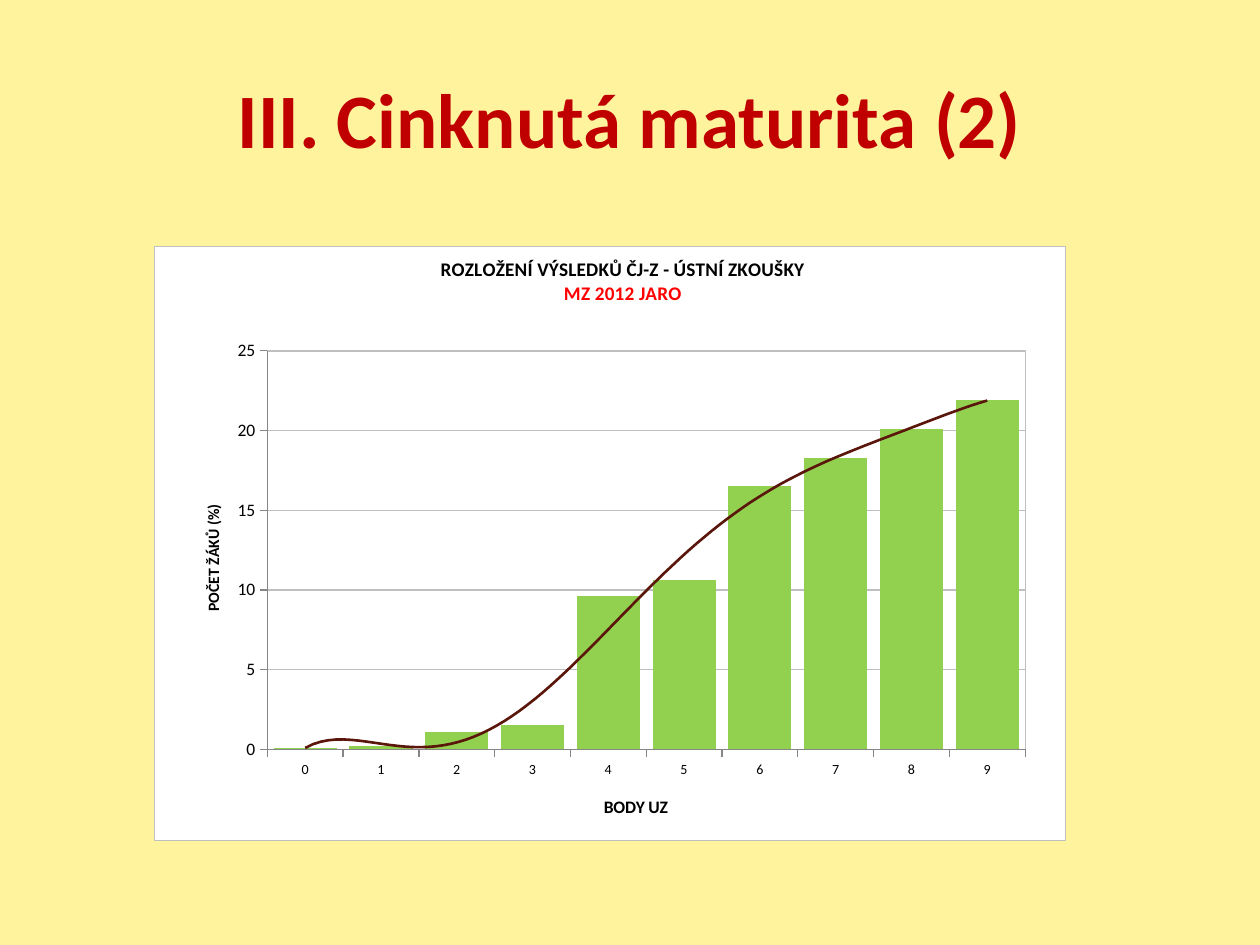
"""Build the slide showing the distribution of oral exam results."""
from lxml import etree
from pptx import Presentation
from pptx.chart.data import CategoryChartData
from pptx.dml.color import RGBColor
from pptx.enum.chart import XL_CHART_TYPE, XL_TICK_MARK
from pptx.enum.text import MSO_ANCHOR, PP_ALIGN
from pptx.oxml.ns import qn
from pptx.util import Inches, Pt

COLUMNS = XL_CHART_TYPE.COLUMN_CLUSTERED
OUTSIDE = XL_TICK_MARK.OUTSIDE
MIDDLE = MSO_ANCHOR.MIDDLE
CENTER = PP_ALIGN.CENTER

HEADING = "III. Cinknutá maturita (2)"
CHART_TITLE = [("ROZLOŽENÍ VÝSLEDKŮ ČJ-Z - ÚSTNÍ ZKOUŠKY", "ink"), ("MZ 2012 JARO", "accent")]
POINTS_TITLE = [("BODY UZ", "ink")]
SHARE_TITLE = [("POČET ŽÁKŮ (%)", "ink")]
SHARES = [0.1, 0.2, 1.1, 1.5, 9.6, 10.6, 16.5, 18.3, 20.1, 21.9]

THEME = {
    "font": "Calibri",
    "colors": {"page": "FFF39D", "heading": "C00000", "ink": "000000", "accent": "FF0000",
               "panel": "FFFFFF", "grid": "BFBFBF", "axis": "868686", "bar": "92D050",
               "trend": "5A160B"},
    "sizes": {"heading": 44, "title": 11, "points": 10, "share": 9, "labels": 10, "ticks": 8},
    "lines": {"thin": 0.75, "trend": 1.5},
}
SLIDE = (10, 7.5)
HEADING_AREA = (0.05, 0.04, 0.9, 0.17)
CHART_AREA = (0.122, 0.26, 0.724, 0.63)
PLOT_AREA = {"x": 0.124, "y": 0.176, "w": 0.832, "h": 0.671}
TITLE_SPOTS = {"title": {"x": 0.31, "y": 0.01}, "points": {"x": 0.49, "y": 0.92},
               "share": {"x": 0.05, "y": 0.43}}


def color(name):
    """Return a theme color."""
    return RGBColor.from_string(THEME["colors"][name])


def place(area):
    """Turn shares of the slide into lengths."""
    return [Inches(share * side) for share, side in zip(area, SLIDE * 2)]


def style_font(font, size, ink="ink", bold=False):
    """Apply theme values to a font."""
    values = {"name": THEME["font"], "size": Pt(THEME["sizes"][size]), "bold": bold}
    for name, value in values.items():
        setattr(font, name, value)
    font.color.rgb = color(ink)


def style_line(line, ink, width="thin"):
    """Apply theme values to a line."""
    line.color.rgb = color(ink)
    line.width = Pt(THEME["lines"][width])


def add_node(parent, tag, **attributes):
    """Add a child element."""
    return etree.SubElement(parent, qn(tag), attributes)


def set_layout(parent, spot, inner=False):
    """Fix a chart part at shares of the chart's size."""
    layout = parent.find(qn("c:layout"))
    if layout is None:
        layout = add_node(parent, "c:layout")
        parent.insert(1 if parent.find(qn("c:tx")) is not None else 0, layout)
    for child in list(layout):
        layout.remove(child)
    manual = add_node(layout, "c:manualLayout")
    if inner:
        add_node(manual, "c:layoutTarget", val="inner")
    for side in ("x", "y"):
        add_node(manual, f"c:{side}Mode", val="edge")
    for side, share in spot.items():
        add_node(manual, f"c:{side}", val=str(share))


def add_outline(shape_properties, ink, width="thin"):
    """Add a solid outline to chart shape properties."""
    outline = add_node(shape_properties, "a:ln", w=str(Pt(THEME["lines"][width])))
    fill = add_node(outline, "a:solidFill")
    add_node(fill, "a:srgbClr", val=THEME["colors"][ink])


def write_title(title, lines, size):
    """Write and place a chart or axis title."""
    frame = title.text_frame
    for index, (words, ink) in enumerate(lines):
        para = frame.add_paragraph() if index else frame.paragraphs[0]
        span = para.add_run()
        span.text = words
        style_font(span.font, size, ink, True)
    set_layout(title.text_frame._txBody.getparent().getparent(), TITLE_SPOTS[size])


def add_heading(page):
    """Add the slide heading."""
    frame = page.shapes.add_textbox(*place(HEADING_AREA)).text_frame
    frame.word_wrap = True
    frame.vertical_anchor = MIDDLE
    para = frame.paragraphs[0]
    para.alignment = CENTER
    span = para.add_run()
    span.text = HEADING
    style_font(span.font, "heading", "heading", True)


def add_trend(series):
    """Add a polynomial trend line to the series."""
    trend = etree.Element(qn("c:trendline"))
    add_outline(add_node(trend, "c:spPr"), "trend", "trend")
    add_node(trend, "c:trendlineType", val="poly")
    add_node(trend, "c:order", val="6")
    for part in ("c:dispRSqr", "c:dispEq"):
        add_node(trend, part, val="0")
    series.find(qn("c:cat")).addprevious(trend)


def add_results(page):
    """Add the column chart of results."""
    data = CategoryChartData()
    data.categories = [str(points) for points in range(len(SHARES))]
    data.add_series("Series 1", SHARES)
    chart = page.shapes.add_chart(COLUMNS, *place(CHART_AREA), data).chart
    style_font(chart.font, "labels")
    chart.has_legend = False
    write_title(chart.chart_title, CHART_TITLE, "title")
    chart.chart_title.include_in_layout = False

    points_axis, share_axis = chart.category_axis, chart.value_axis
    for axis, lines, size, ticks in ((points_axis, POINTS_TITLE, "points", "ticks"),
                                     (share_axis, SHARE_TITLE, "share", "labels")):
        write_title(axis.axis_title, lines, size)
        axis.major_tick_mark = OUTSIDE
        style_font(axis.tick_labels.font, ticks)
        style_line(axis.format.line, "axis")
    for name, value in {"minimum_scale": 0, "maximum_scale": 25, "major_unit": 5}.items():
        setattr(share_axis, name, value)
    share_axis.tick_labels.number_format = "0"
    share_axis.tick_labels.number_format_is_linked = False
    style_line(share_axis.major_gridlines.format.line, "grid")

    plot = chart.plots[0]
    plot.gap_width = 20
    plot.vary_by_categories = False
    bars = plot.series[0]
    bars.format.fill.solid()
    bars.format.fill.fore_color.rgb = color("bar")
    add_trend(bars._element)

    space = chart.element
    plot_area = space.find(".//" + qn("c:plotArea"))
    set_layout(plot_area, PLOT_AREA, True)
    frame = etree.Element(qn("c:spPr"))
    fill = add_node(frame, "a:solidFill")
    add_node(fill, "a:srgbClr", val=THEME["colors"]["panel"])
    add_outline(frame, "grid")
    space.find(qn("c:chart")).addnext(frame)
    plot_frame = add_node(plot_area, "c:spPr")
    add_node(plot_frame, "a:noFill")
    add_outline(plot_frame, "grid")


def main():
    """Build and save the deck."""
    deck = Presentation()
    deck.slide_width, deck.slide_height = (Inches(side) for side in SLIDE)
    page = deck.slides.add_slide(deck.slide_layouts[6])
    page.background.fill.solid()
    page.background.fill.fore_color.rgb = color("page")
    add_heading(page)
    add_results(page)
    deck.save("out.pptx")


if __name__ == "__main__":
    main()
